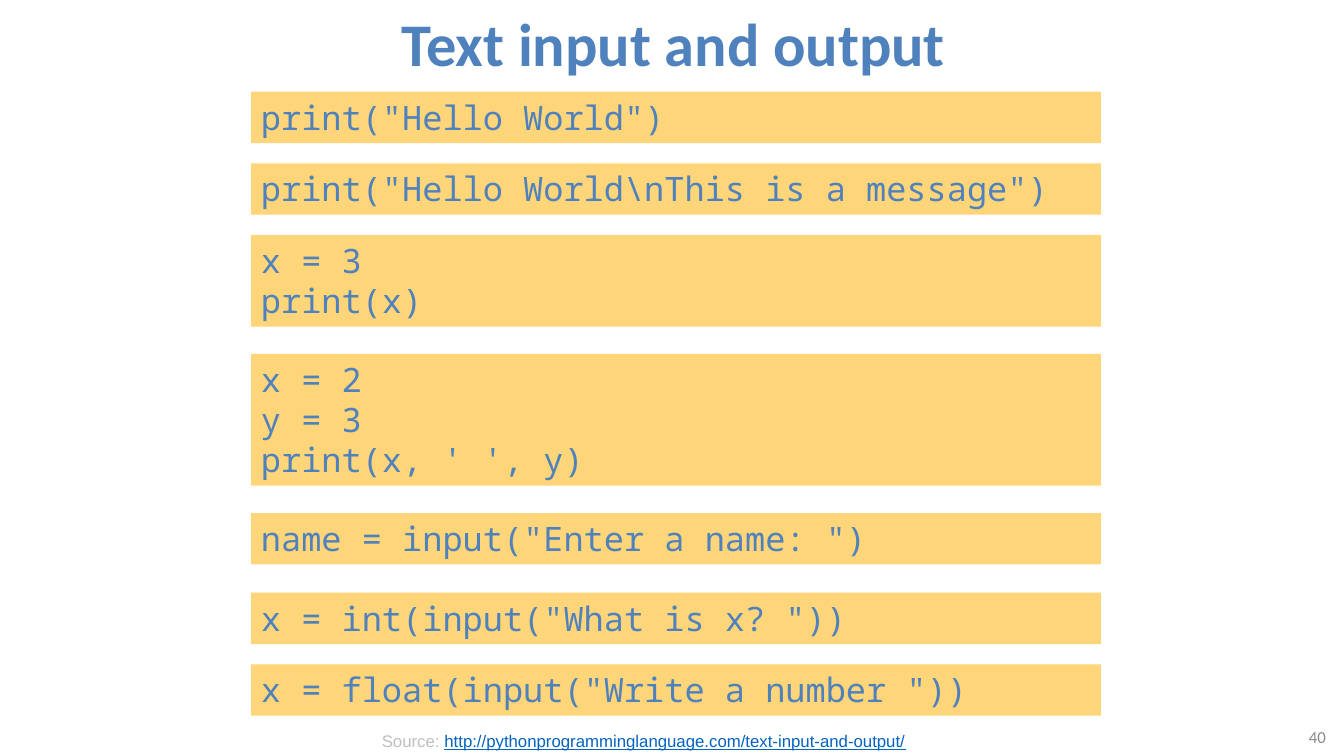
from dataclasses import dataclass

from pptx import Presentation
from pptx.dml.color import RGBColor as Rgb
from pptx.enum.shapes import MSO_SHAPE as Kind
from pptx.enum.text import MSO_ANCHOR as Anchor, MSO_AUTO_SIZE as Fit, PP_ALIGN as Align
from pptx.slide import Slide
from pptx.text.text import Font, TextFrame
from pptx.util import Inches, Pt

WIDE, HIGH = Inches(13.33), Inches(7.5)
HUES = {
    "blue": "4F81BD",
    "sand": "FFD579",
    "gray": "898989",
    "pale": "BFBFBF",
    "link": "0563C1",
}
LEFT, SPAN = 18.68, 63.24
LINE, PAD = 5.33, 1.47


@dataclass
class Code:
    top: float
    lines: list[str]


@dataclass
class Label:
    box: tuple[float, float, float, float]
    runs: list[tuple[str, str]]
    face: str
    size: float
    align: Align
    anchor: Anchor = Anchor.MIDDLE
    bold: bool = False


CODES = [
    Code(12.13, ['print("Hello World")']),
    Code(21.6, ['print("Hello World\\nThis is a message")']),
    Code(31.07, ["x = 3", "print(x)"]),
    Code(46.8, ["x = 2", "y = 3", "print(x, ' ', y)"]),
    Code(67.87, ['name = input("Enter a name: ")']),
    Code(78.4, ['x = int(input("What is x? "))']),
    Code(87.87, ['x = float(input("Write a number "))']),
]
LABELS = [
    Label((16.35, 0, 67.52, 11.2), [("Text input and output", "blue")],
          "Calibri", 43.2, Align.CENTER, bold=True),
    Label((91.52, 95.73, 7.88, 3.47), [("40", "gray")],
          "Calibri", 12, Align.RIGHT),
    Label((22.28, 96, 51.24, 4),
          [("Source: ", "pale"),
           ("http://pythonprogramminglanguage.com/text-input-and-output/", "link")],
          "Arial", 12, Align.CENTER, Anchor.TOP),
]


def place(left: float, top: float, wide: float, high: float) -> tuple[int, ...]:
    return (int(WIDE * left / 100), int(HIGH * top / 100),
            int(WIDE * wide / 100), int(HIGH * high / 100))


def hue(name: str) -> Rgb:
    return Rgb.from_string(HUES[name])


def style(font: Font, face: str, size: float, bold: bool = False) -> None:
    font.name, font.size, font.bold = face, Pt(size), bold


def setup(frame: TextFrame, anchor: Anchor) -> None:
    frame.word_wrap = True
    frame.vertical_anchor = anchor


def draw_code(slide: Slide, code: Code) -> None:
    high = LINE * len(code.lines) + PAD
    shape = slide.shapes.add_shape(
        Kind.RECTANGLE, *place(LEFT, code.top, SPAN, high))
    shape.shadow.inherit = False
    shape.fill.solid()
    shape.fill.fore_color.rgb = hue("sand")
    shape.line.fill.background()
    frame = shape.text_frame
    setup(frame, Anchor.TOP)
    frame.auto_size = Fit.SHAPE_TO_FIT_TEXT
    frame.text = "\n".join(code.lines)
    for para in frame.paragraphs:
        para.alignment = Align.LEFT
        style(para.font, "Noto Sans Mono", 24)
        para.font.color.rgb = hue("blue")


def draw_label(slide: Slide, label: Label) -> None:
    frame = slide.shapes.add_textbox(*place(*label.box)).text_frame
    setup(frame, label.anchor)
    para = frame.paragraphs[0]
    para.alignment = label.align
    style(para.font, label.face, label.size, label.bold)
    for text, tone in label.runs:
        run = para.add_run()
        run.text = text
        run.font.color.rgb = hue(tone)
        if tone == "link":
            run.font.underline = True


def main() -> None:
    deck = Presentation()
    deck.slide_width, deck.slide_height = WIDE, HIGH
    slide = deck.slides.add_slide(deck.slide_layouts[6])
    for label in LABELS:
        draw_label(slide, label)
    for code in CODES:
        draw_code(slide, code)
    deck.save("out.pptx")


if __name__ == "__main__":
    main()
